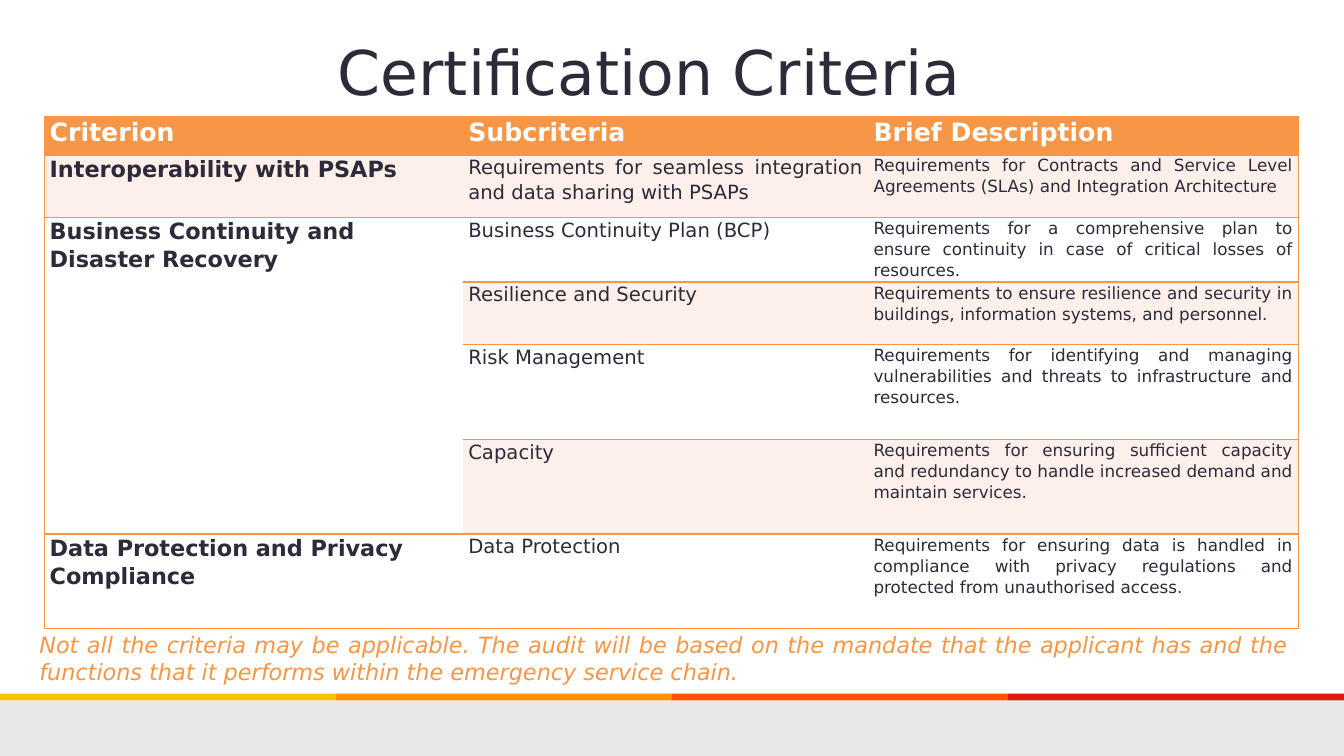
"""Build the slide on certification criteria."""
from lxml import etree
from pptx import Presentation
from pptx.dml.color import RGBColor
from pptx.enum import shapes, text
from pptx.oxml import ns
from pptx.util import Pt

HEX = {"ink": "2D2B3A", "orange": "F79646", "pale": "FDEFE9", "white": "FFFFFF",
       "grey": "E8E8EA", "gold": "FDC00D", "amber": "FE9309", "flame": "FC5507",
       "red": "DC1B0C"}
LEFT, JUST = text.PP_ALIGN.LEFT, text.PP_ALIGN.JUSTIFY


def write(para, words, size, color, align, bold=False, slant=False):
    para.alignment = align
    run = para.add_run()
    run.text = words
    font = run.font
    font.name, font.size, font.bold, font.italic = "DejaVu Sans", Pt(size), bold, slant
    font.color.rgb = RGBColor.from_string(HEX[color])


def border(cell, side):
    line = etree.SubElement(cell._tc.get_or_add_tcPr(), ns.qn("a:ln" + side), w=str(Pt(1)))
    fill = etree.SubElement(line, ns.qn("a:solidFill"))
    etree.SubElement(fill, ns.qn("a:srgbClr"), val=HEX["orange"])


deck = Presentation()
deck.slide_width, deck.slide_height = Pt(960), Pt(540)
slide = deck.slides.add_slide(deck.slide_layouts[5])

bands = [("grey", 0, 500.4, 960, 39.6)]
for i, name in enumerate(["gold", "amber", "flame", "red"]):
    bands.append((name, i * 240, 495.4, 240, 5))
for name, *place in bands:
    band = slide.shapes.add_shape(shapes.MSO_SHAPE.RECTANGLE, *map(Pt, place))
    band.shadow.inherit = False
    band.fill.solid()
    band.fill.fore_color.rgb = RGBColor.from_string(HEX[name])
    band.line.fill.background()

title = slide.shapes.title
title.left, title.top, title.width, title.height = Pt(0), Pt(16), Pt(928), Pt(93.6)
frame = title.text_frame
frame.auto_size = text.MSO_AUTO_SIZE.NONE
frame.vertical_anchor = text.MSO_ANCHOR.TOP
frame.margin_top = Pt(8)
write(frame.paragraphs[0], "Certification Criteria", 44, "ink", text.PP_ALIGN.CENTER)

note = slide.shapes.add_textbox(Pt(21), Pt(447), Pt(906.5), Pt(46)).text_frame
note.word_wrap = True
write(note.paragraphs[0],
      "Not all the criteria may be applicable. The audit will be based on the mandate that "
      "the applicant has and the functions that it performs within the emergency service chain.",
      16, "orange", JUST, slant=True)

rows = [
    ("Criterion", "Subcriteria", "Brief Description"),
    ("Interoperability with PSAPs",
     "Requirements for seamless integration and data sharing with PSAPs",
     "Requirements for Contracts and Service Level Agreements (SLAs) and Integration Architecture"),
    ("Business Continuity and Disaster Recovery", "Business Continuity Plan (BCP)",
     "Requirements for a comprehensive plan to ensure continuity in case of critical losses "
     "of resources."),
    ("", "Resilience and Security",
     "Requirements to ensure resilience and security in buildings, information systems, "
     "and personnel."),
    ("", "Risk Management",
     "Requirements for identifying and managing vulnerabilities and threats to infrastructure "
     "and resources."),
    ("", "Capacity",
     "Requirements for ensuring sufficient capacity and redundancy to handle increased demand "
     "and maintain services."),
    ("Data Protection and Privacy Compliance", "Data Protection",
     "Requirements for ensuring data is handled in compliance with privacy regulations and "
     "protected from unauthorised access."),
]
wide = [299, 289.5, 307.2]
high = [27.4] + [44.6] * 3 + [67.7] * 3
table = slide.shapes.add_table(len(rows), len(wide), Pt(31.7), Pt(83.3),
                               Pt(sum(wide)), Pt(sum(high))).table
style = table._tbl.tblPr.find(ns.qn("a:tableStyleId"))
style.text = "{2D5ABB26-0587-4C30-8999-92F81FD0307C}"
for col, width in zip(table.columns, wide):
    col.width = Pt(width)
for row, height in zip(table.rows, high):
    row.height = Pt(height)
table.cell(2, 0).merge(table.cell(5, 0))

for r, row in enumerate(rows):
    for c, words in enumerate(row):
        cell = table.cell(r, c)
        if cell.is_spanned:
            continue
        for side in ("LTB", "TB", "RTB")[c]:
            border(cell, side)
        head = r == 0
        shade = "orange" if head else "pale" if r % 2 else "white"
        cell.fill.solid()
        cell.fill.fore_color.rgb = RGBColor.from_string(HEX[shade])
        cell.margin_left = cell.margin_right = Pt(3.8)
        cell.margin_top = cell.margin_bottom = Pt(0)
        para = cell.text_frame.paragraphs[0]
        para.line_spacing, para.space_after = 1.07, Pt(8)
        write(para, words, 18 if head else (16, 14, 12)[c], "white" if head else "ink",
              LEFT if head or c == 0 else JUST, bold=head or c == 0)

deck.save("out.pptx")
